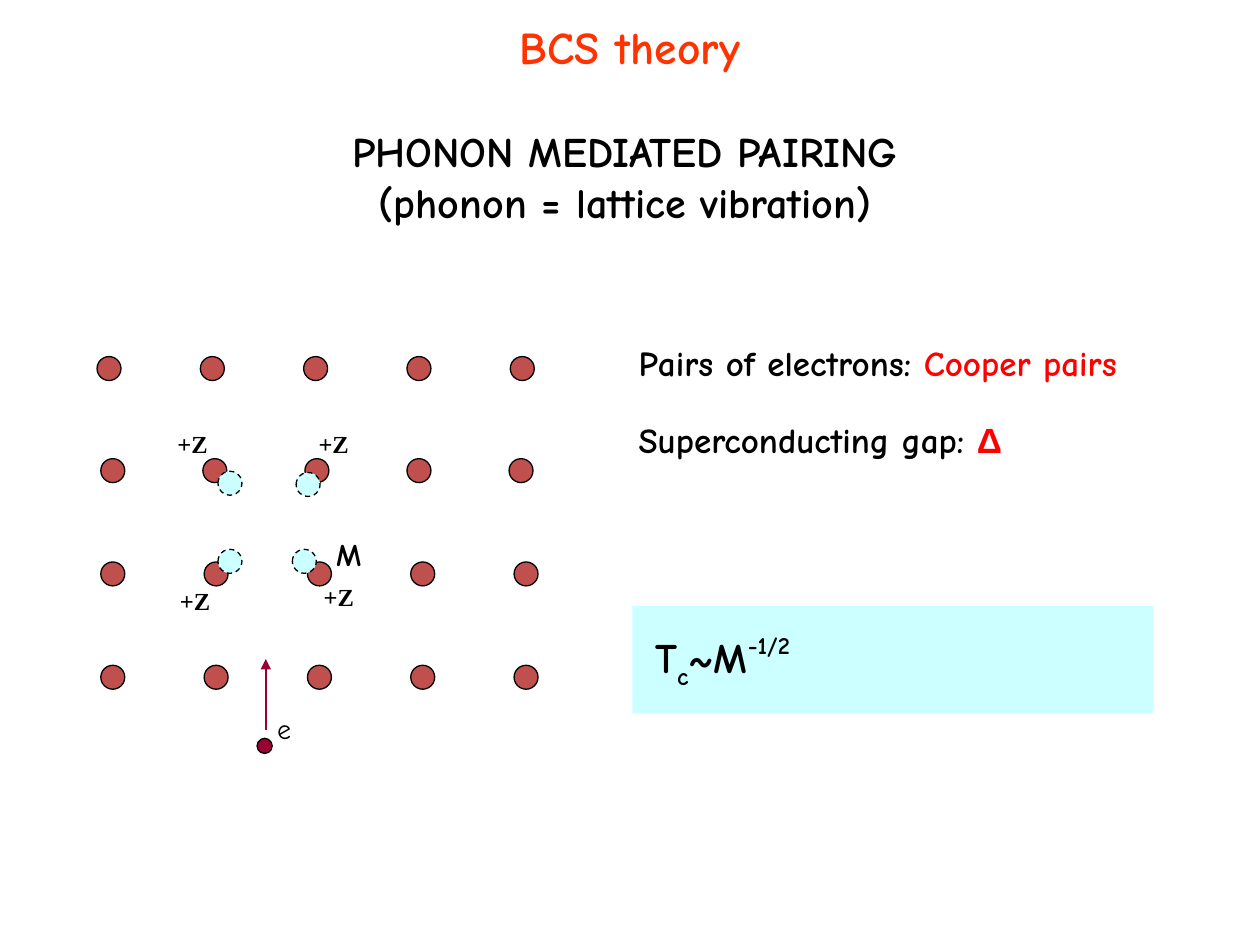
from lxml import etree
from pptx import Presentation
from pptx import util as u
from pptx.dml.color import RGBColor
from pptx.enum import dml, shapes, text
from pptx.oxml.ns import qn

COMIC, TIMES, ARIAL = "Comic Neue", "Times New Roman", "Arial"
BLACK, RED, ORANGE = "000000", "FF0000", "FF3300"
ATOM, SHIFTED, ELECTRON = "C0504D", "CCFFFF", "990033"

TITLE = [[("BCS theory", {"color": ORANGE})]]
HEADING = [[("PHONON MEDIATED PAIRING", {})], [("(phonon = lattice vibration)", {})]]
PAIRS = [[("Pairs of electrons: ", {}), ("Cooper pairs", {"color": RED})]]
GAP = [[("Superconducting gap: ", {}), ("Δ", {"font": ARIAL, "color": RED})]]
ISOTOPE = [[("T", {}), ("c", {"base": -30}), ("~M", {}), ("-1/2", {"base": 45})]]

COLUMNS, ATOM_SIZE, ELECTRON_SIZE = 5, 0.19, 0.12
LATTICE_ROWS = [(0.77, 2.83, 0.82), (0.8, 3.64, 0.81), (0.8, 4.46, 0.82), (0.8, 5.28, 0.82)]
SHIFTED_ATOMS = [(1.73, 4.36), (2.32, 4.36), (2.35, 3.75), (1.73, 3.74)]
CHARGES = [(1.31, 3.36), (2.43, 3.36), (1.33, 4.6), (2.47, 4.57)]


def rgb(value):
    return RGBColor.from_string(value)


def write(sp, paragraphs, size, font=COMIC, bold=True, align=text.PP_ALIGN.LEFT, wrap=False):
    tf = sp.text_frame
    tf.word_wrap = wrap
    tf.auto_size = text.MSO_AUTO_SIZE.SHAPE_TO_FIT_TEXT
    tf.vertical_anchor = text.MSO_ANCHOR.TOP
    for i, runs in enumerate(paragraphs):
        p = tf.paragraphs[0] if i == 0 else tf.add_paragraph()
        p.alignment = align
        for words, style in runs:
            r = p.add_run()
            r.text = words
            r.font.size = u.Pt(size)
            r.font.bold = bold
            r.font.name = style.get("font", font)
            r.font.color.rgb = rgb(style.get("color", BLACK))
            if "base" in style:
                r.font._element.set("baseline", str(style["base"] * 1000))


def add_text(s, box, paragraphs, size, **options):
    sp = s.shapes.add_textbox(*map(u.Inches, box))
    write(sp, paragraphs, size, **options)


def add_shape(s, kind, box, fill, outlined=True, dashed=False):
    sp = s.shapes.add_shape(kind, *map(u.Inches, box))
    sp.shadow.inherit = False
    sp.fill.solid()
    sp.fill.fore_color.rgb = rgb(fill)
    if outlined:
        sp.line.color.rgb = rgb(BLACK)
        sp.line.width = u.Pt(0.75)
        if dashed:
            sp.line.dash_style = dml.MSO_LINE.DASH
    else:
        sp.line.fill.background()


def add_circle(s, x, y, size, fill, dashed=False):
    add_shape(s, shapes.MSO_SHAPE.OVAL, (x, y, size, size), fill, dashed=dashed)


def add_arrow(s, x1, y1, x2, y2, color):
    line = s.shapes.add_connector(shapes.MSO_CONNECTOR.STRAIGHT, *map(u.Inches, (x1, y1, x2, y2)))
    line.line.color.rgb = rgb(color)
    line.line.width = u.Pt(1.5)
    etree.SubElement(line.line._get_or_add_ln(), qn("a:tailEnd"), type="triangle")
    etree.SubElement(line._element.spPr, qn("a:effectLst"))


def main():
    prs = Presentation()
    prs.slide_width, prs.slide_height = u.Inches(10), u.Inches(7.5)
    s = prs.slides.add_slide(prs.slide_layouts[5])

    title = s.shapes.title
    title.left, title.top, title.width, title.height = map(u.Inches, (0, 0.1, 10, 0.53))
    write(title, TITLE, 26, align=text.PP_ALIGN.CENTER, wrap=True)

    for left, top, pitch in LATTICE_ROWS:
        for column in range(COLUMNS):
            add_circle(s, left + column * pitch, top, ATOM_SIZE, ATOM)
    for x, y in SHIFTED_ATOMS:
        add_circle(s, x, y, ATOM_SIZE, SHIFTED, dashed=True)
    for x, y in CHARGES:
        add_text(s, (x, y, 0.44, 0.33), [[("+Z", {})]], 14, font=TIMES)
    add_text(s, (2.57, 4.2, 0.42, 0.4), [[("M", {})]], 18)

    add_circle(s, 2.04, 5.86, ELECTRON_SIZE, ELECTRON)
    add_arrow(s, 2.11, 5.79, 2.11, 5.23, ELECTRON)
    add_text(s, (2.1, 5.6, 0.32, 0.37), [[("e", {})]], 16, bold=False)

    add_text(s, (2.29, 0.95, 5.34, 0.9), HEADING, 24, align=text.PP_ALIGN.CENTER)
    add_text(s, (4.97, 2.66, 4.51, 0.43), PAIRS, 20, wrap=True)
    add_text(s, (4.97, 3.27, 3.34, 0.43), GAP, 20)
    add_shape(s, shapes.MSO_SHAPE.RECTANGLE, (5.02, 4.81, 4.13, 0.85), SHIFTED, outlined=False)
    add_text(s, (5.1, 4.95, 4.29, 0.5), ISOTOPE, 24, wrap=True)

    prs.save("out.pptx")


if __name__ == "__main__":
    main()
